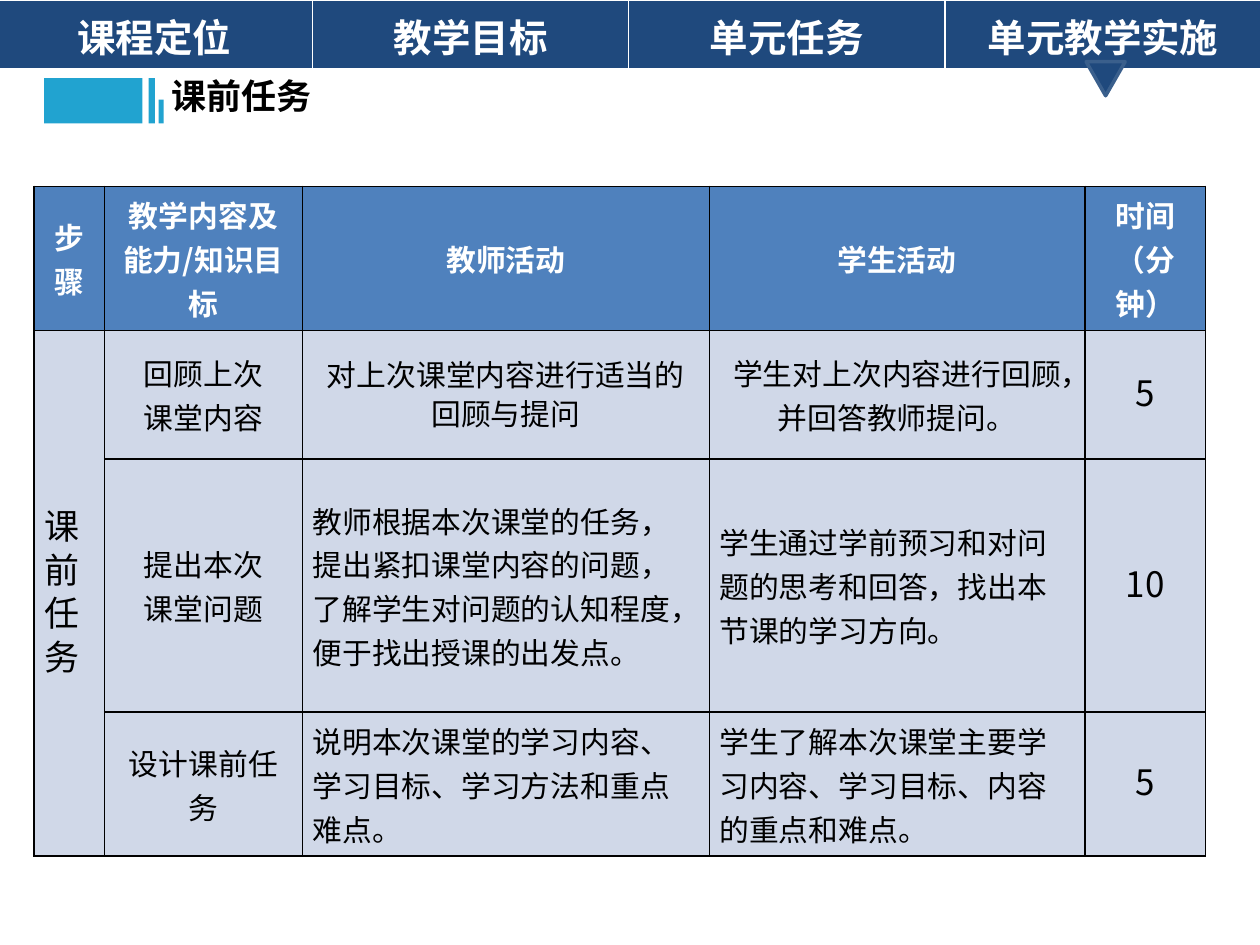
from lxml import etree
from pptx import Presentation
from pptx.dml.color import RGBColor
from pptx.enum import shapes, text
from pptx.oxml import ns
from pptx.util import Inches, Pt

SANS, SERIF = "Noto Sans CJK SC", "Times New Roman"
WHITE, BLACK, NAVY, CYAN = "FFFFFF", "000000", "1F497D", "21A3D0"
HEADER_FILL, BODY_FILL = "4F81BD", "D0D8E8"
CENTER, LEFT = text.PP_ALIGN.CENTER, text.PP_ALIGN.LEFT

TITLE = "课前任务"
SECTIONS = ["课程定位", "教学目标", "单元任务", "单元教学实施"]
PLAN = [
    ["步骤", "教学内容及能力/知识目标", "教师活动", "学生活动", "时间（分钟）"],
    ["课前任务", "回顾上次\n课堂内容", "对上次课堂内容进行适当的回顾与提问",
     "学生对上次内容进行回顾，并回答教师提问。", "5"],
    ["", "提出本次\n课堂问题",
     "教师根据本次课堂的任务，提出紧扣课堂内容的问题，了解学生对问题的认知程度，便于找出授课的出发点。",
     "学生通过学前预习和对问题的思考和回答，找出本节课的学习方向。", "10"],
    ["", "设计课前任务", "说明本次课堂的学习内容、学习目标、学习方法和重点难点。",
     "学生了解本次课堂主要学习内容、学习目标、内容的重点和难点。", "5"],
]
PLAN_COLUMNS = [0.56, 1.57, 3.23, 2.98, 0.96]
PLAN_ROWS = [1.02, 1.02, 2.01, 1.1]
SERIF_CELLS = {(2, 1), (2, 3), (3, 1), (3, 2)}
MARKER_BARS = [(0.35, 0.62, 0.78, 0.36), (1.18, 0.62, 0.05, 0.36), (1.26, 0.79, 0.04, 0.19)]


def rgb(color):
    return RGBColor.from_string(color)


def style_text(frame, size, color, bold=False, font=SANS, align=CENTER, spacing=None):
    for paragraph in frame.paragraphs:
        paragraph.alignment = align
        if spacing:
            paragraph.line_spacing = spacing
        paragraph.font.size = Pt(size)
        paragraph.font.bold = bold
        paragraph.font.color.rgb = rgb(color)
        paragraph.font.name = font
        east_asian = etree.SubElement(paragraph.font._element, ns.qn("a:ea"))
        east_asian.set("typeface", SANS)


def style_cell(cell, fill, border, bottom_width, margin_x, margin_y):
    """Set the borders first, as the fill has to follow them in the XML."""
    properties = cell._tc.get_or_add_tcPr()
    for side in "LRTB":
        width = bottom_width if side == "B" else 1
        line = etree.SubElement(properties, ns.qn(f"a:ln{side}"), w=str(Pt(width)))
        solid = etree.SubElement(line, ns.qn("a:solidFill"))
        etree.SubElement(solid, ns.qn("a:srgbClr"), val=border)
    cell.fill.solid()
    cell.fill.fore_color.rgb = rgb(fill)
    cell.margin_left = cell.margin_right = Inches(margin_x)
    cell.margin_top = cell.margin_bottom = Inches(margin_y)


def add_plain_table(slide, left, top, columns, rows):
    table = slide.shapes.add_table(
        len(rows), len(columns), Inches(left), Inches(top),
        Inches(sum(columns)), Inches(sum(rows))).table
    table.first_row = table.horz_banding = False
    for column, width in zip(table.columns, columns):
        column.width = Inches(width)
    for row, height in zip(table.rows, rows):
        row.height = Inches(height)
    return table


def add_filled_shape(slide, kind, box, fill):
    shape = slide.shapes.add_shape(kind, *map(Inches, box))
    shape.shadow.inherit = False
    shape.fill.solid()
    shape.fill.fore_color.rgb = rgb(fill)
    shape.line.fill.background()
    return shape


def add_plan(slide):
    table = add_plain_table(slide, 0.27, 1.48, PLAN_COLUMNS, PLAN_ROWS)
    last_column = len(PLAN_COLUMNS) - 1
    for r, row in enumerate(PLAN):
        for c, content in enumerate(row):
            cell = table.cell(r, c)
            header = r == 0
            style_cell(cell, HEADER_FILL if header else BODY_FILL, BLACK, 1, 0.08, 0.05)
            cell.vertical_anchor = text.MSO_ANCHOR.MIDDLE
            if not content:
                continue
            cell.text_frame.text = content
            large = not header and c in (0, last_column)
            left_aligned = not header and (c == 0 or (r > 1 and c in (2, 3)))
            style_text(cell.text_frame, 20 if large else 17,
                       WHITE if header else BLACK, header,
                       SERIF if (r, c) in SERIF_CELLS else SANS,
                       LEFT if left_aligned else CENTER, Pt(25))
    review = table.cell(1, 2).text_frame.paragraphs[0]
    review.line_spacing = 0.9
    review.space_before = Pt(12)
    table.cell(1, 0).merge(table.cell(3, 0))


def add_navigation(slide):
    table = add_plain_table(slide, -0.03, 0, [2.51] * len(SECTIONS), [0.49])
    for cell, section in zip(table.rows[0].cells, SECTIONS):
        style_cell(cell, NAVY, WHITE, 3, 0.1, 0.06)
        cell.text_frame.text = section
        style_text(cell.text_frame, 22, WHITE, True, SERIF)
    pointer = add_filled_shape(slide, shapes.MSO_SHAPE.FLOWCHART_MERGE,
                               (8.62, 0.49, 0.31, 0.27), NAVY)
    pointer.line.color.rgb = rgb("3A5F8C")
    pointer.line.width = Pt(2)


def add_heading(slide):
    for box in MARKER_BARS:
        add_filled_shape(slide, shapes.MSO_SHAPE.RECTANGLE, box, CYAN)
    title = slide.shapes.title
    title.left, title.top, title.width, title.height = map(Inches, (1.26, 0.54, 1.54, 0.44))
    frame = title.text_frame
    frame.text = TITLE
    frame.word_wrap = True
    frame.auto_size = text.MSO_AUTO_SIZE.NONE
    frame.vertical_anchor = text.MSO_ANCHOR.TOP
    style_text(frame, 20, BLACK, True, align=LEFT)


def main():
    presentation = Presentation()
    presentation.slide_width, presentation.slide_height = Inches(10), Inches(7.5)
    slide = presentation.slides.add_slide(presentation.slide_layouts[5])
    add_plan(slide)
    add_navigation(slide)
    add_heading(slide)
    presentation.save("out.pptx")


if __name__ == "__main__":
    main()
